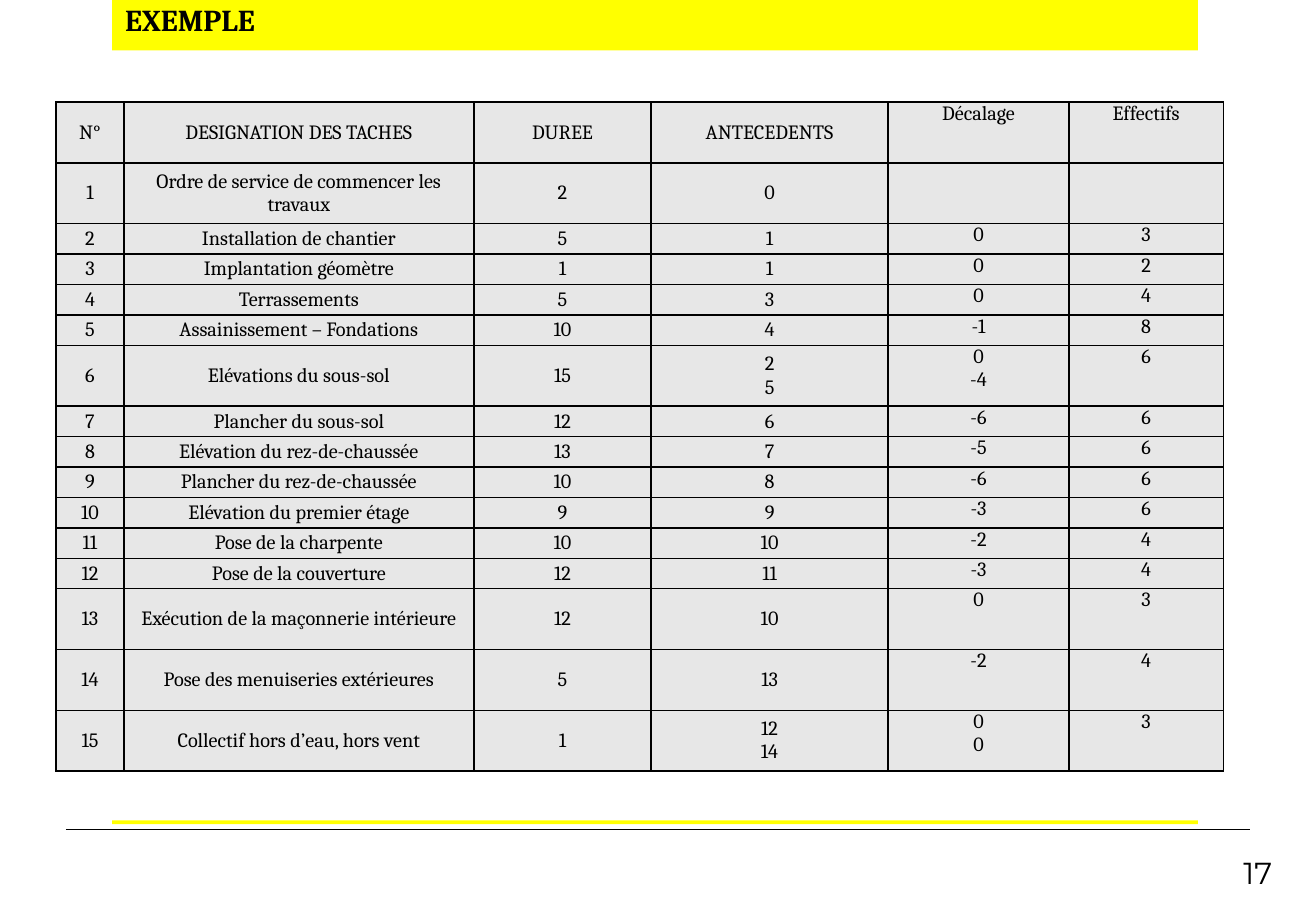
import pptx
import pptx.dml.color
import pptx.enum.shapes
import pptx.enum.text
import pptx.oxml
import pptx.oxml.ns
import pptx.util

Pt = pptx.util.Pt
RGB = pptx.dml.color.RGBColor.from_string
ALIGN = pptx.enum.text.PP_ALIGN
ANCHOR = pptx.enum.text.MSO_ANCHOR
COLORS = {"yellow": "FFFF00", "black": "000000", "cell": "E7E7E7"}
COL_WIDTHS = [40.3, 207.4, 105.1, 140.4, 107.3, 91.4]
ROW_HEIGHT = 18.03
TALL_ROWS = {0, 1, 6, 13, 14, 15}
TASKS = [
    ["N°", "DESIGNATION DES TACHES", "DUREE", "ANTECEDENTS", "Décalage", "Effectifs"],
    ["1", "Ordre de service de commencer les travaux", "2", "0", "", ""],
    ["2", "Installation de chantier", "5", "1", "0", "3"],
    ["3", "Implantation géomètre", "1", "1", "0", "2"],
    ["4", "Terrassements", "5", "3", "0", "4"],
    ["5", "Assainissement – Fondations", "10", "4", "-1", "8"],
    ["6", "Elévations du sous-sol", "15", "2\n5", "0\n-4", "6"],
    ["7", "Plancher du sous-sol", "12", "6", "-6", "6"],
    ["8", "Elévation du rez-de-chaussée", "13", "7", "-5", "6"],
    ["9", "Plancher du rez-de-chaussée", "10", "8", "-6", "6"],
    ["10", "Elévation du premier étage", "9", "9", "-3", "6"],
    ["11", "Pose de la charpente", "10", "10", "-2", "4"],
    ["12", "Pose de la couverture", "12", "11", "-3", "4"],
    ["13", "Exécution de la maçonnerie intérieure", "12", "10", "0", "3"],
    ["14", "Pose des menuiseries extérieures", "5", "13", "-2", "4"],
    ["15", "Collectif hors d’eau, hors vent", "1", "12\n14", "0\n0", "3"],
]


def style_text(tf, font, size, align, bold=False):
    for p in tf.paragraphs:
        p.alignment = align
        for r in p.runs:
            r.font.name = font
            r.font.size = Pt(size)
            r.font.bold = bold
            r.font.color.rgb = RGB(COLORS["black"])


def add_borders(cell):
    tcPr = cell._tc.get_or_add_tcPr()
    for side in ("lnL", "lnR", "lnT", "lnB"):
        tcPr.append(pptx.oxml.parse_xml(
            f'<a:{side} {pptx.oxml.ns.nsdecls("a")} w="12700"><a:solidFill>'
            f'<a:srgbClr val="{COLORS["black"]}"/></a:solidFill></a:{side}>'))


prs = pptx.Presentation()
prs.slide_width, prs.slide_height = Pt(780), Pt(540)
s = prs.slides.add_slide(prs.slide_layouts[5])

# Yellow header band and footer rule
for top, height in ((0, 30), (486.3, 2.2)):
    sp = s.shapes.add_shape(pptx.enum.shapes.MSO_SHAPE.RECTANGLE,
                            Pt(66.4), Pt(top), Pt(643.6), Pt(height))
    sp.shadow.inherit = False
    sp.fill.solid()
    sp.fill.fore_color.rgb = RGB(COLORS["yellow"])
    sp.line.fill.background()

footer_line = s.shapes.add_connector(pptx.enum.shapes.MSO_CONNECTOR.STRAIGHT,
                                     Pt(39), Pt(491.8), Pt(741), Pt(491.8))
footer_line.line.color.rgb = RGB(COLORS["black"])
footer_line.line.width = Pt(1)
footer_line._element.spPr.append(
    pptx.oxml.parse_xml(f'<a:effectLst {pptx.oxml.ns.nsdecls("a")}/>'))

# Page number
page = s.shapes.add_textbox(Pt(696.2), Pt(502.6), Pt(65), Pt(28.8))
tf = page.text_frame
tf.word_wrap = True
tf.vertical_anchor = ANCHOR.MIDDLE
tf.text = "17"
style_text(tf, "Montserrat", 18, ALIGN.RIGHT)

# Task table
frame = s.shapes.add_table(len(TASKS), len(COL_WIDTHS), Pt(33.2), Pt(60.5),
                           Pt(sum(COL_WIDTHS)),
                           Pt(ROW_HEIGHT * (len(TASKS) + len(TALL_ROWS))))
table = frame.table
table.first_row = False
table.horz_banding = False
for col, width in zip(table.columns, COL_WIDTHS):
    col.width = Pt(width)
for i, task in enumerate(TASKS):
    table.rows[i].height = Pt(ROW_HEIGHT * (2 if i in TALL_ROWS else 1))
    for j, text in enumerate(task):
        cell = table.cell(i, j)
        add_borders(cell)
        cell.fill.solid()
        cell.fill.fore_color.rgb = RGB(COLORS["cell"])
        cell.margin_left = cell.margin_right = Pt(3.6)
        cell.margin_top = cell.margin_bottom = 0
        cell.vertical_anchor = ANCHOR.MIDDLE if j < 4 else ANCHOR.TOP
        cell.text_frame.text = text
        style_text(cell.text_frame, "Cambria", 12, ALIGN.CENTER)

# Title, brought in front of the header band
title = s.shapes.title
title.left, title.top, title.width, title.height = Pt(67), Pt(-2.9), Pt(104.4), Pt(28.8)
tf = title.text_frame
tf.text = "EXEMPLE"
tf.word_wrap = False
tf.auto_size = pptx.enum.text.MSO_AUTO_SIZE.SHAPE_TO_FIT_TEXT
tf.vertical_anchor = ANCHOR.TOP
style_text(tf, "Cambria", 18, ALIGN.LEFT, bold=True)
s.shapes._spTree.append(title._element)

prs.save("out.pptx")
